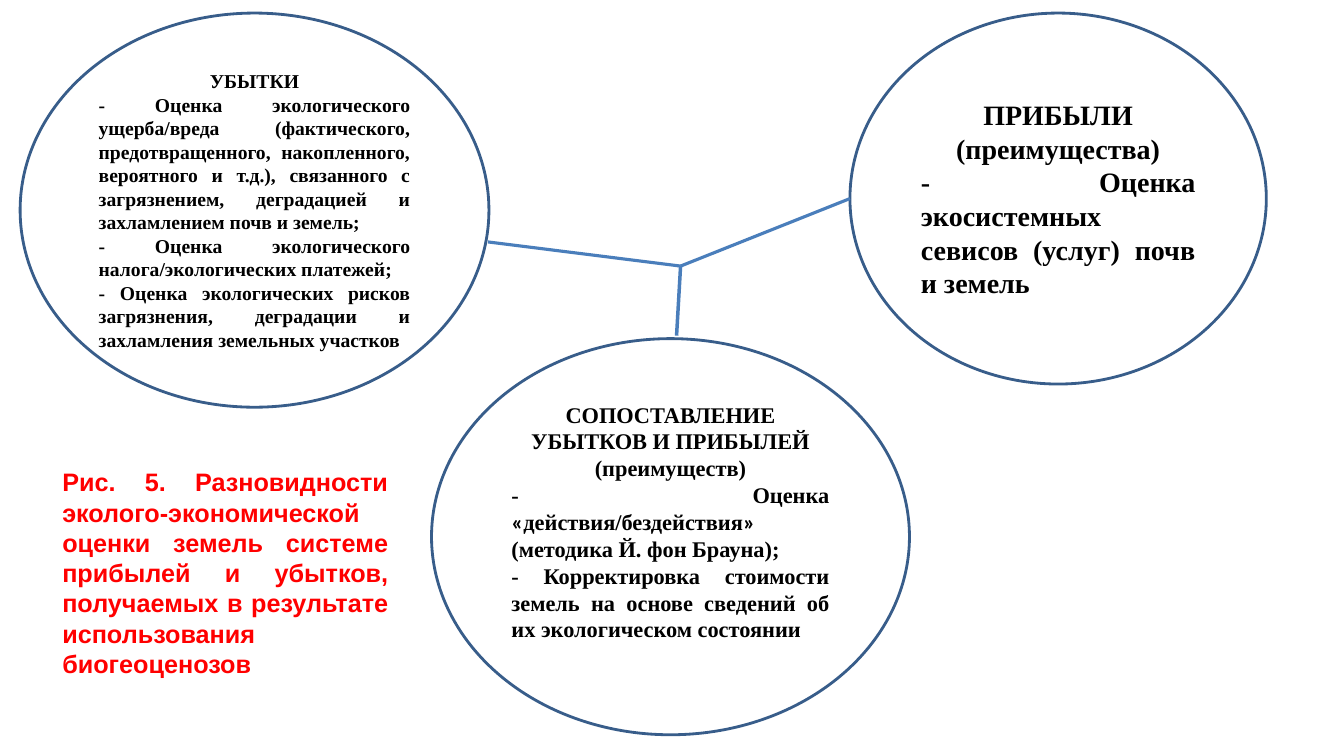
from lxml import etree
from pptx import Presentation
from pptx import util as u
from pptx.dml.color import RGBColor
from pptx.enum import shapes, text
from pptx.oxml.ns import qn

THEME = {
    "paper": RGBColor(0xFF, 0xFF, 0xFF),
    "ink": RGBColor(0, 0, 0),
    "outline": RGBColor(0x38, 0x5D, 0x8A),
    "link": RGBColor(0x4A, 0x7E, 0xBB),
    "caption": RGBColor(0xFF, 0, 0),
    "serif": "Times New Roman",
    "quotes": "Calibri",
    "sans": "Arial",
    "losses_size": 14,
    "gains_size": 20,
    "balance_size": 16,
    "caption_size": 18,
}

prs = Presentation()
prs.slide_width = u.Inches(13.33)
prs.slide_height = u.Inches(7.5)
col = prs.slide_width / 100
row = prs.slide_height / 100
slide = prs.slides.add_slide(prs.slide_layouts[6])


def grid(x, y, *size):
    return [round(n * unit) for n, unit in zip((x, y, *size), (col, row) * 2)]


def add_run(p, words, font, size, color):
    r = p.add_run()
    r.text = words
    r.font.name = font
    r.font.size = u.Pt(size)
    r.font.bold = True
    r.font.color.rgb = color


ovals = [
    ((1.5, 1.73, 34.88, 52.13), THEME["losses_size"], 0.05, [
        ["УБЫТКИ"],
        ["- Оценка экологического ущерба/вреда (фактического, предотвращенного, "
         "накопленного, вероятного и т.д.), связанного с загрязнением, "
         "деградацией и захламлением почв и земель;"],
        ["- Оценка экологического налога/экологических платежей;"],
        ["- Оценка экологических рисков загрязнения, деградации и "
         "захламления земельных участков"],
    ]),
    ((63.24, 1.73, 30.98, 49.07), THEME["gains_size"], 0.05, [
        ["ПРИБЫЛИ (преимущества)"],
        ["- Оценка экосистемных севисов (услуг) почв и земель"],
    ]),
    ((32.11, 44.8, 35.56, 52.4), THEME["balance_size"], 0.35, [
        ["СОПОСТАВЛЕНИЕ УБЫТКОВ И ПРИБЫЛЕЙ (преимуществ)"],
        ["- Оценка ", "«", "действия/бездействия", "»", " (методика Й. фон Брауна);"],
        ["- Корректировка стоимости земель на основе сведений об "
         "их экологическом состоянии"],
    ]),
]
for box, size, bottom, paragraphs in ovals:
    sp = slide.shapes.add_shape(shapes.MSO_SHAPE.OVAL, *grid(*box))
    sp.shadow.inherit = False
    sp.fill.solid()
    sp.fill.fore_color.rgb = THEME["paper"]
    sp.line.color.rgb = THEME["outline"]
    sp.line.width = u.Pt(2)
    tf = sp.text_frame
    tf.word_wrap = True
    tf.vertical_anchor = text.MSO_ANCHOR.MIDDLE
    tf.margin_bottom = u.Inches(bottom)
    for i, runs in enumerate(paragraphs):
        p = tf.add_paragraph() if i else tf.paragraphs[0]
        p.alignment = text.PP_ALIGN.JUSTIFY if i else text.PP_ALIGN.CENTER
        for words in runs:
            font = THEME["quotes"] if words in "«»" else THEME["serif"]
            add_run(p, words, font, size, THEME["ink"])

hub = grid(50.64, 35.2)
for end, width in [((50.34, 44.4), 2.5), ((63.24, 26.27), 2.25), ((36.31, 32), 2.25)]:
    link = slide.shapes.add_connector(shapes.MSO_CONNECTOR.STRAIGHT, *hub, *grid(*end))
    link.line.color.rgb = THEME["link"]
    link.line.width = u.Pt(width)
    etree.SubElement(link._element.spPr, qn("a:effectLst"))

caption = slide.shapes.add_textbox(*grid(3.9, 61.07, 25.73, 29.6))
tf = caption.text_frame
tf.word_wrap = True
tf.auto_size = text.MSO_AUTO_SIZE.SHAPE_TO_FIT_TEXT
p = tf.paragraphs[0]
p.alignment = text.PP_ALIGN.JUSTIFY
add_run(p, "Рис. 5. Разновидности эколого-экономической оценки земель системе "
        "прибылей и убытков, получаемых в результате использования биогеоценозов",
        THEME["sans"], THEME["caption_size"], THEME["caption"])

prs.save("out.pptx")
